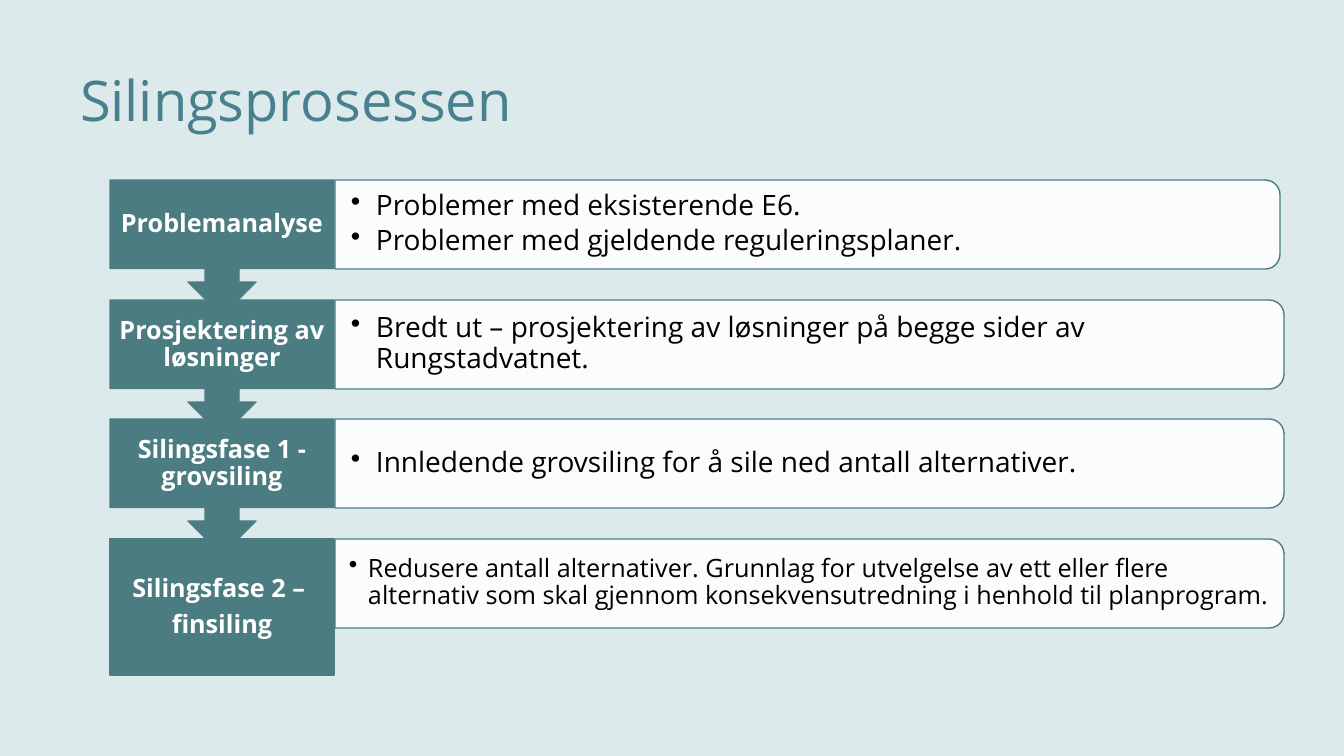
from dataclasses import dataclass

from lxml.etree import SubElement
from pptx import Presentation
from pptx.dml.color import RGBColor
from pptx.enum.shapes import MSO_SHAPE
from pptx.enum.text import MSO_ANCHOR, MSO_AUTO_SIZE, PP_ALIGN
from pptx.oxml.ns import qn
from pptx.shapes.autoshape import Shape
from pptx.slide import Slide
from pptx.util import Emu, Pt

EMU_PER_PX = 914400 / 100.8
FONT = "Open Sans"

BACKGROUND = RGBColor(0xDD, 0xEA, 0xEB)
TITLE_BLUE = RGBColor(0x48, 0x80, 0x8D)
TEAL = RGBColor(0x4A, 0x7C, 0x82)
WHITE = RGBColor(0xFF, 0xFF, 0xFF)
BLACK = RGBColor(0x00, 0x00, 0x00)

LABEL_LEFT, LABEL_WIDTH = 110, 224
FIRST_TOP, STEP_PITCH = 180, 119.6
CALLOUT_HEIGHT, BODY_HEIGHT = 136, 89
PANEL_LEFT = 335
PANEL_OPACITY = 90


@dataclass(frozen=True)
class Step:
    label: list[str]
    points: list[str]
    panel_width: int = 949
    point_size: int = 20
    point_inset: int = 16
    point_indent: int = 25
    is_last: bool = False


STEPS = [
    Step(["Problemanalyse"],
         ["Problemer med eksisterende E6.",
          "Problemer med gjeldende reguleringsplaner."],
         panel_width=945),
    Step(["Prosjektering av løsninger"],
         ["Bredt ut – prosjektering av løsninger på begge sider av Rungstadvatnet."]),
    Step(["Silingsfase 1 - grovsiling"],
         ["Innledende grovsiling for å sile ned antall alternativer."]),
    Step(["Silingsfase 2 – ", "finsiling"],
         ["Redusere antall alternativer. Grunnlag for utvelgelse av ett eller flere "
          "alternativ som skal gjennom konsekvensutredning i henhold til planprogram."],
         point_size=18, point_inset=14, point_indent=19, is_last=True),
]


def px(length: float) -> Emu:
    return Emu(round(length * EMU_PER_PX))


def add_text(slide: Slide, paragraphs: list[str], left: int, top: int, width: int,
             height: int, *, size: int, color: RGBColor, bold: bool = False,
             align: PP_ALIGN = PP_ALIGN.LEFT, anchor: MSO_ANCHOR = MSO_ANCHOR.MIDDLE,
             fit: bool = True, inset: int = 1, left_inset: int = 1,
             after_percent: int = 0, bullet_indent: int = 0) -> None:
    box = slide.shapes.add_textbox(px(left), px(top), px(width), px(height))
    frame = box.text_frame
    frame.word_wrap = True
    frame.auto_size = MSO_AUTO_SIZE.TEXT_TO_FIT_SHAPE if fit else MSO_AUTO_SIZE.NONE
    frame.vertical_anchor = anchor
    frame.margin_left = px(left_inset)
    frame.margin_top = frame.margin_right = frame.margin_bottom = px(inset)
    for index, text in enumerate(paragraphs):
        paragraph = frame.add_paragraph() if index else frame.paragraphs[0]
        paragraph.alignment = align
        paragraph.line_spacing = 0.9
        properties = paragraph._p.get_or_add_pPr()
        if after_percent:
            after = SubElement(properties, qn("a:spcAft"))
            SubElement(after, qn("a:spcPct"), val=str(after_percent * 1000))
        if bullet_indent:
            properties.set("marL", str(px(bullet_indent)))
            properties.set("indent", str(-px(bullet_indent)))
            SubElement(properties, qn("a:buChar"), char="•")
        run = paragraph.add_run()
        run.text = text
        run.font.name = FONT
        run.font.size = Pt(size)
        run.font.bold = bold
        run.font.color.rgb = color


def add_turned_shape(slide: Slide, kind: MSO_SHAPE, left: int, top: int, width: int,
                     height: int, fill: RGBColor) -> Shape:
    """Add a shape turned a quarter clockwise that covers the given area."""
    shift = (width - height) / 2
    shape = slide.shapes.add_shape(kind, px(left + shift), px(top - shift),
                                   px(height), px(width))
    shape.rotation = 90
    shape.shadow.inherit = False
    shape.fill.solid()
    shape.fill.fore_color.rgb = fill
    shape.line.color.rgb = TEAL
    shape.line.width = Pt(1)
    return shape


def add_step(slide: Slide, step: Step, top: int) -> None:
    label_kind = MSO_SHAPE.RECTANGLE if step.is_last else MSO_SHAPE.RIGHT_ARROW_CALLOUT
    add_turned_shape(slide, label_kind, LABEL_LEFT, top, LABEL_WIDTH, CALLOUT_HEIGHT, TEAL)
    add_text(slide, step.label, LABEL_LEFT, top, LABEL_WIDTH,
             CALLOUT_HEIGHT if step.is_last else BODY_HEIGHT, size=18, color=WHITE,
             bold=True, align=PP_ALIGN.CENTER, after_percent=35)

    panel = add_turned_shape(slide, MSO_SHAPE.ROUND_2_SAME_RECTANGLE, PANEL_LEFT, top,
                             step.panel_width, BODY_HEIGHT, WHITE)
    panel_color = panel.fill._xPr.find(qn("a:solidFill")).find(qn("a:srgbClr"))
    SubElement(panel_color, qn("a:alpha"), val=str(PANEL_OPACITY * 1000))
    add_text(slide, step.points, PANEL_LEFT, top + 4, step.panel_width - 4,
             BODY_HEIGHT - 9, size=step.point_size, color=BLACK,
             left_inset=step.point_inset, after_percent=15,
             bullet_indent=step.point_indent)


def main() -> None:
    presentation = Presentation()
    presentation.slide_width, presentation.slide_height = px(1344), px(756)
    slide = presentation.slides.add_slide(presentation.slide_layouts[6])
    slide.background.fill.solid()
    slide.background.fill.fore_color.rgb = BACKGROUND

    add_text(slide, ["Silingsprosessen"], 80, 73, 1229, 80, size=40, color=TITLE_BLUE,
             anchor=MSO_ANCHOR.TOP, fit=False, inset=0, left_inset=0)
    for index, step in enumerate(STEPS):
        add_step(slide, step, FIRST_TOP + round(index * STEP_PITCH))

    presentation.save("out.pptx")


if __name__ == "__main__":
    main()
